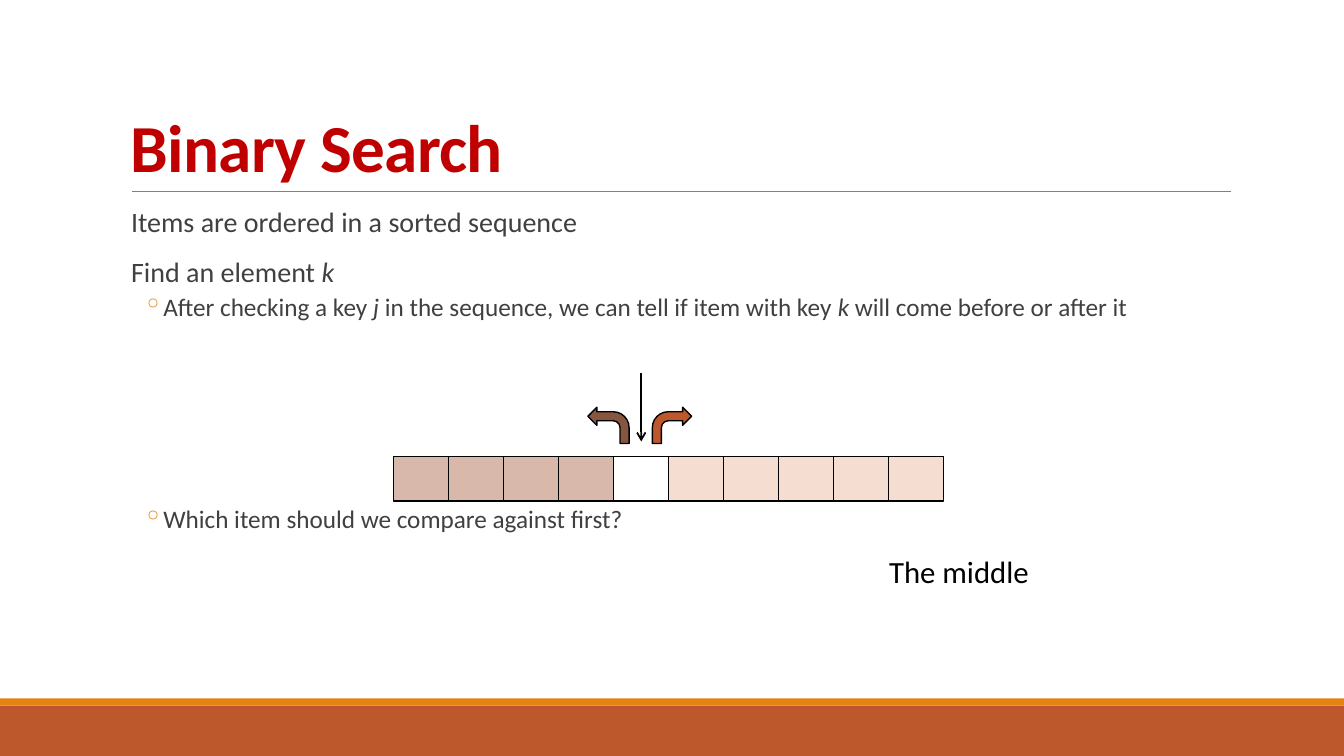
from pptx import Presentation
from pptx import util as u
from pptx.dml.color import RGBColor
from pptx.enum import shapes, text
from pptx.oxml import ns, xmlchemy

RUST = RGBColor(0xBD, 0x58, 0x2C)
ORANGE = RGBColor(0xE4, 0x83, 0x12)
BROWN = RGBColor(0x86, 0x56, 0x40)
TAN = RGBColor(0xD7, 0xB8, 0xAB)
PEACH = RGBColor(0xF5, 0xDD, 0xD2)
GREY = RGBColor(0x80, 0x80, 0x80)
DARK = RGBColor(0x40, 0x40, 0x40)
RED = RGBColor(0xC0, 0x00, 0x00)
BLACK = RGBColor(0, 0, 0)


def add_xml(parent, tag, **attrs):
    child = xmlchemy.OxmlElement(tag)
    for name, value in attrs.items():
        child.set(name, value)
    parent.append(child)
    return child


class SlideBuilder:
    """Draws styled elements on one slide."""

    font = "Calibri"

    def __init__(self, slide):
        self.s = slide

    def shape(self, kind, x, y, w, h, fill=None, outlined=True, flip=False):
        sp = self.s.shapes.add_shape(kind, *map(u.Inches, (x, y, w, h)))
        sp.shadow.inherit = False
        if fill is None:
            sp.fill.background()
        else:
            sp.fill.solid()
            sp.fill.fore_color.rgb = fill
        if outlined:
            sp.line.color.rgb = BLACK
            sp.line.width = u.Pt(1)
        else:
            sp.line.fill.background()
        if flip:
            sp._element.spPr.find(ns.qn("a:xfrm")).set("flipH", "1")

    def line(self, x1, y1, x2, y2, color, width, arrow=False):
        cx = self.s.shapes.add_connector(
            shapes.MSO_CONNECTOR.STRAIGHT, *map(u.Inches, (x1, y1, x2, y2)))
        cx.line.color.rgb = color
        cx.line.width = u.Pt(width)
        if arrow:
            add_xml(cx._element.spPr.find(ns.qn("a:ln")), "a:tailEnd", type="arrow")
        add_xml(cx._element.spPr, "a:effectLst")

    def textbox(self, x, y, w, h, anchor=text.MSO_ANCHOR.TOP, wrap=True):
        tf = self.s.shapes.add_textbox(*map(u.Inches, (x, y, w, h))).text_frame
        tf.word_wrap = wrap
        tf.vertical_anchor = anchor
        return tf

    def paragraph(self, p, runs, size, color, bold=None):
        p.font.name = self.font
        p.font.size = u.Pt(size)
        p.font.color.rgb = color
        p.font.bold = bold
        for i, part in enumerate(runs):
            r = p.add_run()
            r.text = part
            if i % 2:
                r.font.italic = True

    def body_paragraph(self, p, runs, size, before, after, bullet=False):
        self.paragraph(p, runs, size, DARK)
        p.line_spacing = 0.9
        p.space_before = u.Pt(before)
        p.space_after = u.Pt(after)
        pPr = p._p.get_or_add_pPr()
        pPr.set("marL", str(u.Inches(0.42 if bullet else 0.1)))
        if bullet:
            p.alignment = text.PP_ALIGN.JUSTIFY
            pPr.set("indent", str(-u.Inches(0.2)))
            color = xmlchemy.OxmlElement("a:buClr")
            add_xml(color, "a:srgbClr", val=str(ORANGE))
            char = xmlchemy.OxmlElement("a:buChar")
            char.set("char", "◦")
            pPr.insert_element_before(color, "a:defRPr")
            pPr.insert_element_before(char, "a:defRPr")


def main():
    prs = Presentation()
    prs.slide_width = u.Inches(13.33)
    prs.slide_height = u.Inches(7.5)
    b = SlideBuilder(prs.slides.add_slide(prs.slide_layouts[6]))
    rect = shapes.MSO_SHAPE.RECTANGLE
    bent = shapes.MSO_SHAPE.BENT_ARROW

    b.shape(rect, 0, 7, 13.33, 0.5, RUST, outlined=False)
    b.shape(rect, 0, 6.93, 13.33, 0.07, ORANGE, outlined=False)
    b.line(1.31, 1.9, 12.21, 1.9, GREY, 0.5)

    p = b.textbox(1.2, 0.31, 11, 1.59, text.MSO_ANCHOR.BOTTOM).paragraphs[0]
    b.paragraph(p, ["Binary Search"], 48, RED, bold=True)
    p.line_spacing = 0.85
    p.runs[0]._r.get_or_add_rPr().set("spc", "-50")

    tf = b.textbox(1.2, 2.02, 11, 4.4)
    tf.margin_left = tf.margin_right = 0
    body = [
        (["Items are ordered in a sorted sequence"], 20, 12, 2, False),
        (["Find an element ", "k"], 20, 12, 2, False),
        (["After checking a key ", "j",
          " in the sequence, we can tell if item with key ", "k",
          " will come before or after it"], 18, 2, 4, True),
        (["Which item should we compare against first?"], 18, 128, 4, True),
    ]
    for i, row in enumerate(body):
        b.body_paragraph(tf.add_paragraph() if i else tf.paragraphs[0], *row)

    cells = [TAN] * 4 + [None] + [PEACH] * 5
    pitch = 5.46 / len(cells)
    for i, fill in enumerate(cells):
        b.shape(rect, 3.9 + i * pitch, 4.53, pitch, 0.44, fill)

    b.shape(bent, 6.47, 4.04, 0.39, 0.36, RUST)
    b.shape(bent, 5.83, 4.04, 0.41, 0.36, BROWN, flip=True)
    b.line(6.36, 3.7, 6.36, 4.38, BLACK, 1.25, arrow=True)

    answer = b.textbox(8.72, 5.43, 1.84, 0.47, wrap=False)
    b.paragraph(answer.paragraphs[0], ["The middle"], 22, BLACK)

    prs.save("out.pptx")


if __name__ == "__main__":
    main()
